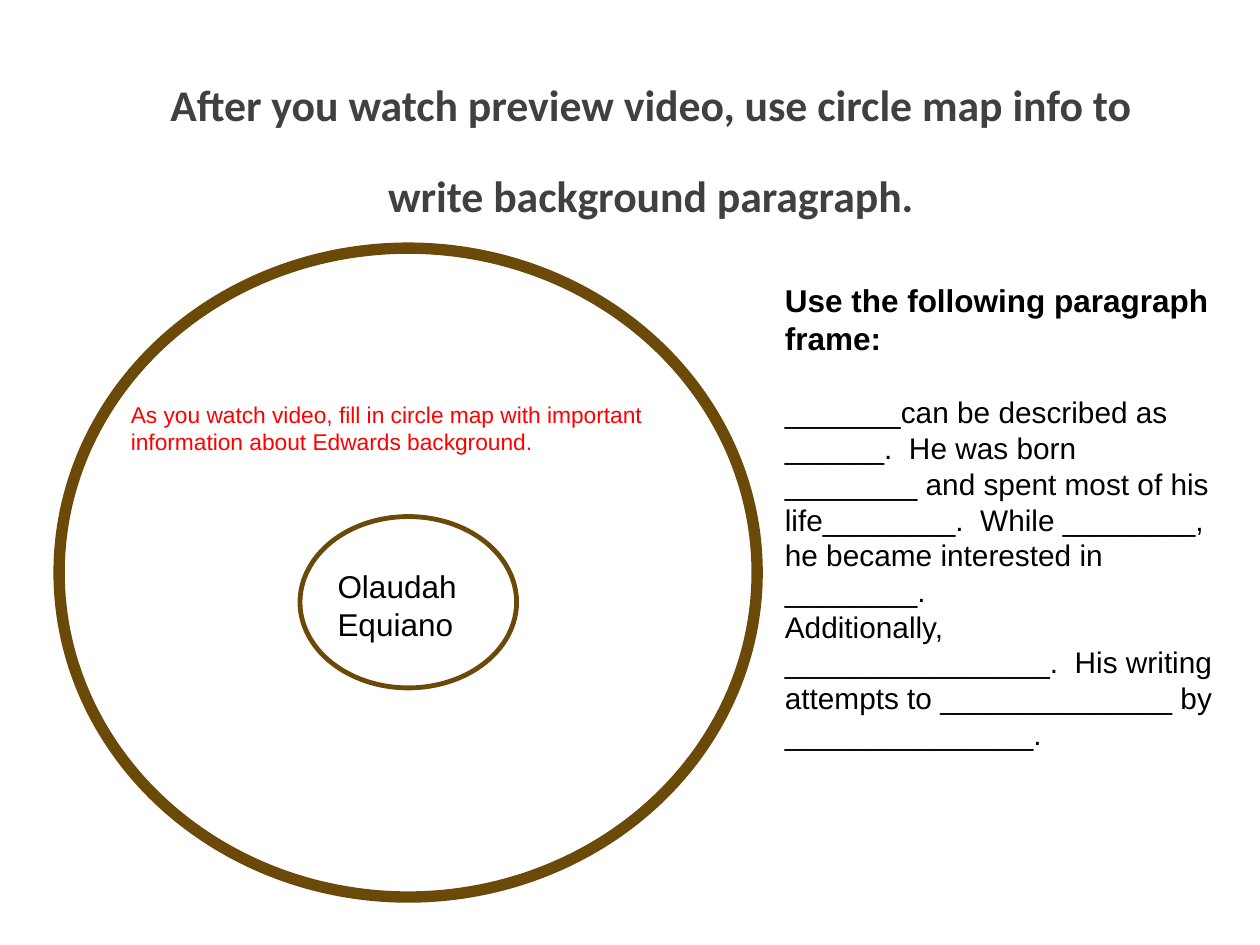
"""Builds the circle map slide with its paragraph frame."""
from pptx import Presentation
from pptx.dml.color import RGBColor
from pptx.enum.shapes import MSO_SHAPE
from pptx.enum.text import MSO_ANCHOR, MSO_AUTO_SIZE, PP_ALIGN
from pptx.util import Pt

OVAL = MSO_SHAPE.OVAL
MIDDLE = MSO_ANCHOR.MIDDLE
NO_AUTOFIT = MSO_AUTO_SIZE.NONE
GROW = MSO_AUTO_SIZE.SHAPE_TO_FIT_TEXT
CENTER = PP_ALIGN.CENTER

BROWN = RGBColor(0x6B, 0x49, 0x08)
GREY = RGBColor(0x40, 0x40, 0x40)
BLACK = RGBColor(0, 0, 0)
RED = RGBColor(0xFF, 0, 0)

TITLE = {"name": "Calibri", "size": Pt(25), "bold": True, "color": GREY}
TOPIC = {"name": "Arial", "size": Pt(18), "bold": False, "color": BLACK}
HINT = {"name": "Arial", "size": Pt(13), "bold": False, "color": RED}
HEADING = {**TOPIC, "bold": True}
FRAME = {**TOPIC, "size": Pt(17)}


def format_font(font, values):
    """Set font attributes from a dict of format values."""
    for name, value in values.items():
        if name == "color":
            font.color.rgb = value
        else:
            setattr(font, name, value)


def fill_title(title, text, left, top, width, height):
    """Move the title placeholder and write its text."""
    place = {"left": left, "top": top, "width": width, "height": height}
    for name, value in place.items():
        setattr(title, name, Pt(value))
    frame = title.text_frame
    frame.auto_size = NO_AUTOFIT
    frame.vertical_anchor = MIDDLE
    frame.text = text
    para = frame.paragraphs[0]
    para.alignment = CENTER
    para.line_spacing = Pt(52)
    format_font(para.runs[0].font, TITLE)


def add_ring(slide, left, top, width, height, weight):
    """Add an unfilled brown ellipse."""
    ring = slide.shapes.add_shape(OVAL, Pt(left), Pt(top), Pt(width), Pt(height))
    ring.shadow.inherit = False
    ring.fill.background()
    ring.line.color.rgb = BROWN
    ring.line.width = Pt(weight)


def add_text(slide, left, top, width, height, lines):
    """Add a wrapping text box from (text, format, space before) lines."""
    box = slide.shapes.add_textbox(Pt(left), Pt(top), Pt(width), Pt(height))
    frame = box.text_frame
    frame.word_wrap = True
    frame.auto_size = GROW
    for index, (text, values, space) in enumerate(lines):
        para = frame.add_paragraph() if index else frame.paragraphs[0]
        para.space_before = Pt(space)
        span = para.add_run()
        span.text = text
        format_font(span.font, values)


def main():
    """Build and save the deck."""
    deck = Presentation()
    deck.slide_width, deck.slide_height = Pt(720), Pt(540)
    slide = deck.slides.add_slide(deck.slide_layouts.get_by_name("Title Only"))
    fill_title(
        slide.shapes.title,
        "After you watch preview video, use circle map info to write background paragraph.",
        85.7, 21.6, 572.4, 105.1,
    )
    add_ring(slide, 33.8, 141.8, 398.9, 370.8, 6.5)
    add_ring(slide, 171.4, 295.2, 123.8, 97.9, 2.75)
    add_text(slide, 185.8, 320.4, 110.2, 51.1, [("Olaudah Equiano", TOPIC, 0)])
    add_text(slide, 67.7, 225.4, 322.6, 38.9, [
        ("As you watch video, fill in circle map with important "
         "information about Edwards background.", HINT, 0),
    ])
    add_text(slide, 441.4, 157, 259.9, 278.6, [
        ("Use the following paragraph frame:", HEADING, 0),
        ("_______can be described as ______.  He was born", FRAME, 21.5),
        ("________ and spent most of his life________.  While ________, "
         "he became interested in ________.", FRAME, 0),
        ("Additionally, ________________.  His writing attempts to "
         "______________ by _______________.", FRAME, 0),
    ])
    deck.save("out.pptx")


if __name__ == "__main__":
    main()
